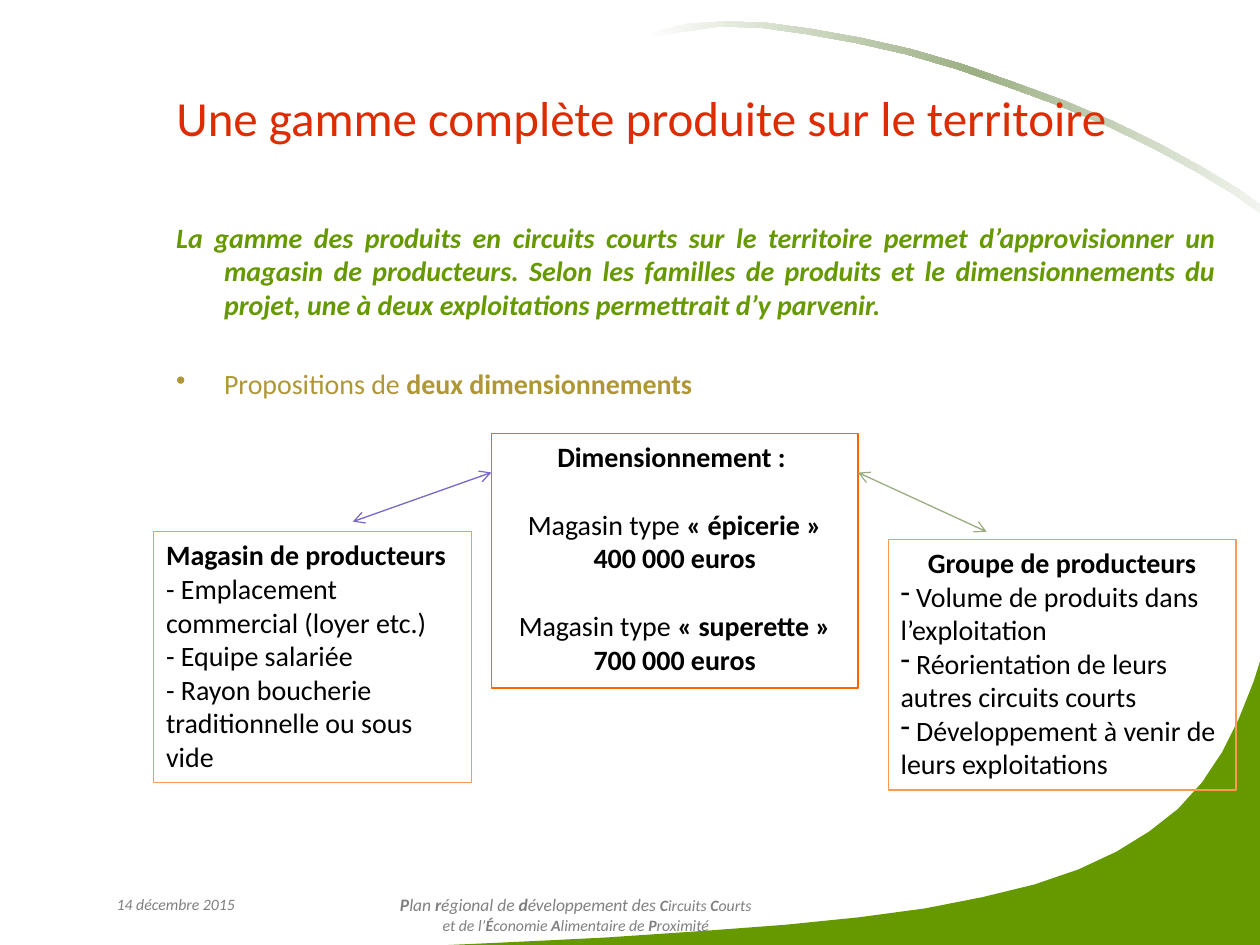
import pptx
import pptx.dml.color
import pptx.enum.dml
import pptx.enum.shapes
import pptx.enum.text
import pptx.oxml
import pptx.oxml.ns
import pptx.util

RGBColor = pptx.dml.color.RGBColor
Align = pptx.enum.text.PP_ALIGN
Anchor = pptx.enum.text.MSO_ANCHOR
AutoSize = pptx.enum.text.MSO_AUTO_SIZE

WHITE = RGBColor(0xFF, 0xFF, 0xFF)
BLACK = RGBColor(0, 0, 0)
GREY = RGBColor(0x80, 0x80, 0x80)
RED = RGBColor(0xDC, 0x2C, 0x00)
GREEN = RGBColor(0x66, 0x99, 0x00)
SAGE = RGBColor(0x9C, 0xB0, 0x84)
OCHRE = RGBColor(0xAF, 0x97, 0x38)
ORANGE = RGBColor(0xFF, 0x66, 0x00)
PEACH = RGBColor(0xFF, 0x99, 0x53)
VIOLET = RGBColor(0x7A, 0x66, 0xC7)
OLIVE = RGBColor(0x99, 0xAD, 0x80)

COLUMNS, ROWS = 100, 75
HILL = [(100, 52.5), (100, 75), (35.6, 75), (40, 74.8), (44.2, 74.6), (48.2, 74.4),
        (55.6, 73.9), (62.3, 73.4), (68.2, 72.8), (73.4, 72.1), (78, 71.2),
        (82.1, 70.2), (85.6, 69), (88.6, 67.6), (91.2, 66), (93.5, 64.2),
        (95.4, 62.1), (97, 59.7), (98.3, 57.1), (99.5, 54.1)]
ARC = [(51, 3), (52, 2.5), (54.5, 1.9), (57.5, 1.7), (60.8, 1.8), (64.4, 2.3),
       (68.3, 3), (72.3, 3.9), (76.4, 5.1), (80.4, 6.5), (84.5, 8), (88.3, 9.6),
       (92, 11.4), (95.3, 13.2), (98.3, 15), (100.8, 16.8), (102.8, 18.6), (103.6, 19.5)]
ARC_WIDTH = 0.4


class SlideBuilder:
    font = "Calibri"
    line_width = pptx.util.Pt(0.75)

    def __init__(self, deck):
        self.slide = deck.slides.add_slide(deck.slide_layouts[5])
        self.column = deck.slide_width / COLUMNS
        self.row = deck.slide_height / ROWS

    def place(self, x, y):
        return round(x * self.column), round(y * self.row)

    def area(self, left, top, width, height):
        return *self.place(left, top), *self.place(width, height)

    def paragraph(self, frame, text, size, color, align=Align.LEFT, before=0,
                  bullet=None, hang=0, italic=False):
        first = frame.paragraphs[0]
        para = first if not first.runs else frame.add_paragraph()
        props = para._p.get_or_add_pPr()
        if hang:
            props.set("marL", str(round(hang * self.column)))
            props.set("indent", str(-round(hang * self.column)))
        if bullet:
            mark = pptx.oxml.ns.qn("a:buChar")
            props.append(props.makeelement(mark, {"char": bullet}))
        para.alignment = align
        if before:
            para.space_before = pptx.util.Pt(before)
        for index, part in enumerate(text.split("*")):
            if part:
                run = para.add_run()
                run.text = part
                run.font.name = self.font
                run.font.size = pptx.util.Pt(size)
                run.font.bold = index % 2 == 1
                run.font.italic = italic
                run.font.color.rgb = color

    def title(self, text, area):
        holder = self.slide.shapes.title
        holder.left, holder.top, holder.width, holder.height = self.area(*area)
        holder.text_frame.auto_size = AutoSize.NONE
        holder.text_frame.vertical_anchor = Anchor.MIDDLE
        self.paragraph(holder.text_frame, text, 28, RED)

    def text(self, area):
        frame = self.slide.shapes.add_textbox(*self.area(*area)).text_frame
        frame.word_wrap = True
        return frame

    def box(self, area, color):
        shape = self.slide.shapes.add_shape(
            pptx.enum.shapes.MSO_SHAPE.RECTANGLE, *self.area(*area))
        shape.shadow.inherit = False
        shape.fill.background()
        shape.line.color.rgb = color
        shape.line.width = self.line_width
        shape.text_frame.word_wrap = True
        shape.text_frame.vertical_anchor = Anchor.TOP
        shape.text_frame.auto_size = AutoSize.SHAPE_TO_FIT_TEXT
        return shape.text_frame

    def outline(self, points):
        start, *others = [self.place(x, y) for x, y in points]
        builder = self.slide.shapes.build_freeform(*start, scale=1.0)
        builder.add_line_segments(others, close=True)
        shape = builder.convert_to_shape()
        shape.shadow.inherit = False
        shape.line.fill.background()
        return shape

    def hill(self, points):
        shape = self.outline(points)
        shape.fill.solid()
        shape.fill.fore_color.rgb = GREEN

    def swoosh(self, upper):
        lower = [(x - ARC_WIDTH, y + ARC_WIDTH) for x, y in reversed(upper[3:])]
        fill = self.outline(upper + lower).fill
        fill.gradient()
        fill.gradient_angle = 0
        stops = fill._fill._gradFill.find(pptx.oxml.ns.qn("a:gsLst"))
        for stop in list(stops):
            stops.remove(stop)
        for position, color in ((0, WHITE), (50, SAGE), (100, WHITE)):
            stops.append(pptx.oxml.parse_xml(
                f'<a:gs {pptx.oxml.ns.nsdecls("a")} pos="{position * 1000}">'
                f'<a:srgbClr val="{color}"/></a:gs>'))

    def arrow(self, start, end, color):
        link = self.slide.shapes.add_connector(
            pptx.enum.shapes.MSO_CONNECTOR.STRAIGHT, *self.place(*start), *self.place(*end))
        link.line.color.rgb = color
        link.line.width = self.line_width
        line = link.line._get_or_add_ln()
        for tip in ("a:headEnd", "a:tailEnd"):
            line.append(line.makeelement(pptx.oxml.ns.qn(tip), {"type": "arrow"}))
        props = link._element.spPr
        props.append(props.makeelement(pptx.oxml.ns.qn("a:effectLst"), {}))


def main():
    deck = pptx.Presentation()
    deck.slide_width = pptx.util.Inches(10)
    deck.slide_height = pptx.util.Inches(7.5)
    page = SlideBuilder(deck)

    page.hill(HILL)
    page.swoosh(ARC)
    holder = page.slide.shapes.title._element
    holder.getparent().append(holder)

    date = page.text((7.8, 70.5, 12.3, 4))
    page.paragraph(date, "14 décembre 2015", 9, GREY, Align.CENTER, italic=True)
    plan = page.text((21.7, 70.5, 48, 4))
    page.paragraph(plan, "*P*lan* r*égional de* d*éveloppement des ", 10, GREY,
                   Align.CENTER, italic=True)
    for run_text, bold in (("C", True), ("ircuits ", False), ("C", True), ("ourts", False)):
        run = plan.paragraphs[0].add_run()
        run.text = run_text
        run.font.name = page.font
        run.font.size = pptx.util.Pt(9)
        run.font.bold = bold
        run.font.italic = True
        run.font.color.rgb = GREY
    page.paragraph(plan, "et de l’*É*conomie *A*limentaire de *P*roximité", 9, GREY,
                   Align.CENTER, italic=True)

    page.title("Une gamme complète produite sur le territoire", (13, 3, 84.5, 12.5))
    summary = page.text((13, 17, 84.5, 19.2))
    page.paragraph(summary, "*La gamme des produits en circuits courts sur le territoire permet "
                   "d’approvisionner un magasin de producteurs. Selon les familles de produits "
                   "et le dimensionnements du projet, une à deux exploitations permettrait "
                   "d’y parvenir.*", 16, GREEN, Align.JUSTIFY, hang=3.8, italic=True)
    page.paragraph(summary, "Propositions de *deux dimensionnements*", 16, OCHRE,
                   before=26, bullet="•", hang=3.8)

    sizing = page.box((39, 34.4, 29.1, 20.2), ORANGE)
    page.paragraph(sizing, "*Dimensionnement : *", 16, BLACK, Align.CENTER)
    for store, turnover in (("« épicerie »", "400 000 euros"), ("« superette »", "700 000 euros")):
        page.paragraph(sizing, f"Magasin type *{store}*", 16, BLACK, Align.CENTER, before=19.5)
        page.paragraph(sizing, f"*{turnover}*", 16, BLACK, Align.CENTER)

    growers = page.box((70.5, 42.8, 27.6, 19.9), PEACH)
    page.paragraph(growers, "*Groupe de producteurs*", 16, BLACK, Align.CENTER)
    for need in (" Volume de produits dans l’exploitation",
                 " Réorientation de leurs autres circuits courts",
                 " Développement à venir de leurs exploitations"):
        page.paragraph(growers, need, 16, BLACK, bullet="-")

    shop = page.box((12.2, 42.2, 25.2, 19.9), PEACH)
    for line in ("*Magasin de producteurs*", "- Emplacement commercial (loyer etc.)",
                 "- Equipe salariée", "- Rayon boucherie traditionnelle ou sous vide"):
        page.paragraph(shop, line, 16, BLACK)

    page.arrow((39, 37.5), (28, 41.4), VIOLET)
    page.arrow((68.1, 37.5), (78.3, 42.2), OLIVE)
    deck.save("out.pptx")


if __name__ == "__main__":
    main()
